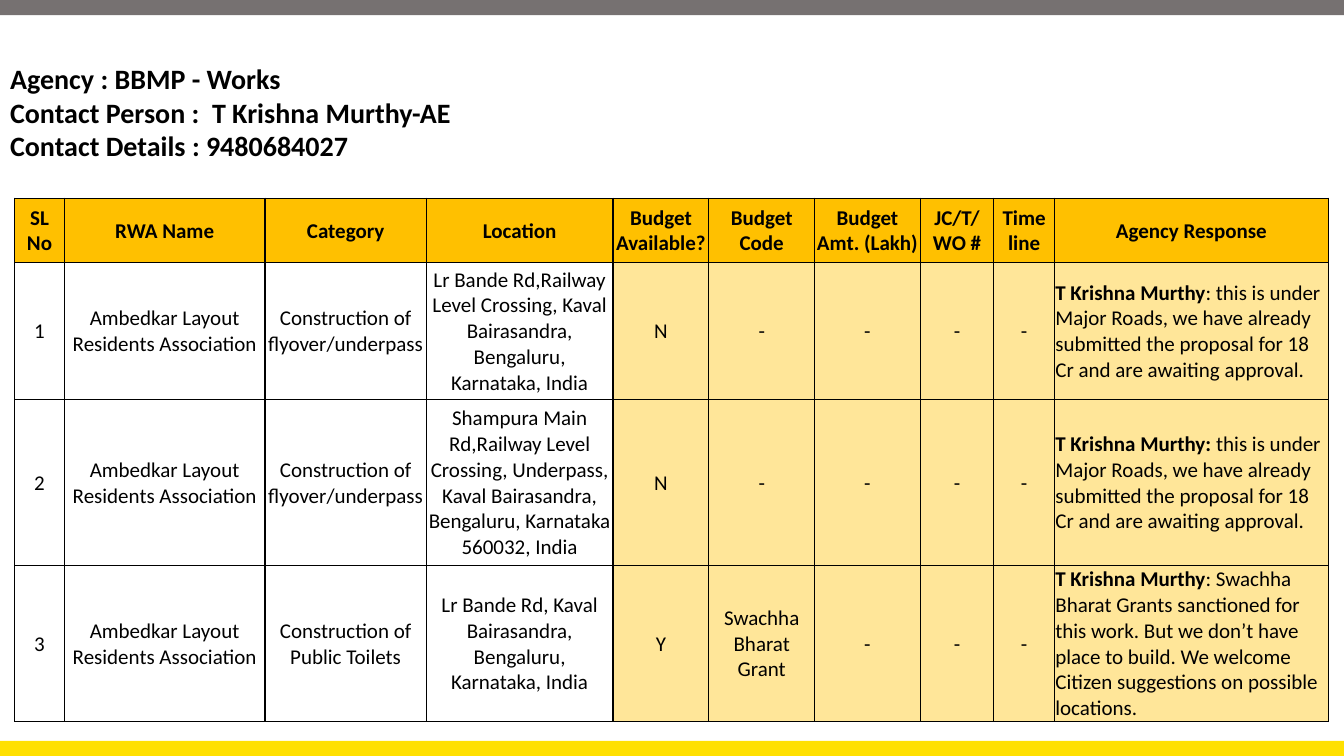
from lxml import etree
from pptx import Presentation
from pptx.dml.color import RGBColor
from pptx.enum.shapes import MSO_SHAPE
from pptx.enum.text import MSO_ANCHOR, MSO_AUTO_SIZE, PP_ALIGN
from pptx.oxml.ns import qn
from pptx.util import Pt

RECT = MSO_SHAPE.RECTANGLE
MIDDLE, BOTTOM = MSO_ANCHOR.MIDDLE, MSO_ANCHOR.BOTTOM
LEFT, CENTER = PP_ALIGN.LEFT, PP_ALIGN.CENTER
NO_AUTOSIZE = MSO_AUTO_SIZE.NONE
TITLE_ONLY = 5

WIDTH, HEIGHT, BAR = 960, 540, 10.8
BLACK, GREY, YELLOW = "000000", "767171", "FFE000"
AMBER, CREAM = "FFC000", "FFE699"
TITLE_FONT = {"name": "Calibri", "size": Pt(20), "bold": True}
CELL_FONT = {"name": "Calibri", "size": Pt(15), "bold": False}
CELL_MARGINS = {"margin_left": Pt(0.75), "margin_right": Pt(0.75),
                "margin_top": Pt(0.75), "margin_bottom": Pt(0)}

TITLE = ["Agency : BBMP - Works",
         "Contact Person :  T Krishna Murthy-AE",
         "Contact Details : 9480684027"]
COLUMNS = [("SL No", 35.5), ("RWA Name", 143.3), ("Category", 115.2),
           ("Location", 133.4), ("Budget Available?", 68.5),
           ("Budget Code", 75.5), ("Budget Amt. (Lakh)", 75.5),
           ("JC/T/WO #", 52.6), ("Time line", 43.2),
           ("Agency Response", 195.8)]
ROW_HEIGHTS = [46, 97.7, 118.9, 108.3]
FIRST_AGENCY_COLUMN = 4
RWA = "Ambedkar Layout Residents Association"
UNDERPASS = "Construction of flyover/underpass"
OFFICER = "T Krishna Murthy"
AWAITING = ("this is under Major Roads, we have already submitted the "
            "proposal for 18 Cr and are awaiting approval.")
REQUESTS = [
    ["1", RWA, UNDERPASS,
     "Lr Bande Rd,Railway Level Crossing, Kaval Bairasandra, Bengaluru, "
     "Karnataka, India",
     "N", "-", "-", "-", "-", (OFFICER, ": " + AWAITING)],
    ["2", RWA, UNDERPASS,
     "Shampura Main Rd,Railway Level Crossing, Underpass, Kaval Bairasandra, "
     "Bengaluru, Karnataka 560032, India",
     "N", "-", "-", "-", "-", (OFFICER + ": ", AWAITING)],
    ["3", RWA, "Construction of Public Toilets",
     "Lr Bande Rd, Kaval Bairasandra, Bengaluru, Karnataka, India",
     "Y", "Swachha Bharat Grant", "-", "-", "-",
     (OFFICER, ": Swachha Bharat Grants sanctioned for this work. But we "
      "don’t have place to build. We welcome Citizen suggestions on possible "
      "locations.")],
]


def rgb(color):
    return RGBColor.from_string(color)


def set_attrs(obj, values):
    for name, value in values.items():
        setattr(obj, name, value)


def add_run(p, text, font, **extra):
    r = p.add_run()
    r.text = text
    set_attrs(r.font, {**font, **extra})
    r.font.color.rgb = rgb(BLACK)


def add_bar(slide, top, color):
    sp = slide.shapes.add_shape(RECT, 0, Pt(top), Pt(WIDTH), Pt(BAR))
    sp.shadow.inherit = False
    sp.fill.solid()
    sp.fill.fore_color.rgb = rgb(color)
    sp.line.fill.background()


def fill_title(slide):
    sp = slide.shapes.title
    set_attrs(sp, {"left": Pt(0), "top": Pt(13), "width": Pt(WIDTH),
                   "height": Pt(106.5)})
    tf = sp.text_frame
    set_attrs(tf, {"word_wrap": True, "auto_size": NO_AUTOSIZE,
                   "vertical_anchor": BOTTOM,
                   "margin_left": Pt(7.2), "margin_right": Pt(7.2),
                   "margin_top": Pt(3.6), "margin_bottom": Pt(3.6)})
    for i, line in enumerate(TITLE):
        p = tf.add_paragraph() if i else tf.paragraphs[0]
        set_attrs(p, {"alignment": LEFT, "line_spacing": 1.0,
                      "space_before": Pt(0)})
        add_run(p, line, TITLE_FONT)


def add_borders(cell):
    tc_pr = cell._tc.get_or_add_tcPr()
    for i, side in enumerate(("a:lnL", "a:lnR", "a:lnT", "a:lnB")):
        ln = etree.Element(qn(side), w=str(Pt(1)))
        fill = etree.SubElement(ln, qn("a:solidFill"))
        etree.SubElement(fill, qn("a:srgbClr"), val=BLACK)
        tc_pr.insert(i, ln)


def fill_cell(cell, content, color, bold):
    """Write a string centred, or a (bold lead, text) pair aligned left."""
    set_attrs(cell, {**CELL_MARGINS, "vertical_anchor": MIDDLE})
    if color:
        cell.fill.solid()
        cell.fill.fore_color.rgb = rgb(color)
    else:
        cell.fill.background()
    add_borders(cell)
    p = cell.text_frame.paragraphs[0]
    if isinstance(content, tuple):
        p.alignment = LEFT
        lead, text = content
        add_run(p, lead, CELL_FONT, bold=True)
        add_run(p, text, CELL_FONT)
    else:
        p.alignment = CENTER
        add_run(p, content, CELL_FONT, bold=bold)


def add_request_table(slide):
    headings, widths = zip(*COLUMNS)
    rows = [headings, *REQUESTS]
    table = slide.shapes.add_table(
        len(rows), len(headings), Pt(10.5), Pt(141.6),
        Pt(sum(widths)), Pt(sum(ROW_HEIGHTS))).table
    table.horz_banding = False
    for column, width in zip(table.columns, widths):
        column.width = Pt(width)
    for i, (row, height) in enumerate(zip(rows, ROW_HEIGHTS)):
        table.rows[i].height = Pt(height)
        for j, content in enumerate(row):
            body = CREAM if j >= FIRST_AGENCY_COLUMN else None
            fill_cell(table.cell(i, j), content, body if i else AMBER, i == 0)


def main():
    prs = Presentation()
    prs.slide_width, prs.slide_height = Pt(WIDTH), Pt(HEIGHT)
    slide = prs.slides.add_slide(prs.slide_layouts[TITLE_ONLY])
    add_bar(slide, HEIGHT - BAR, YELLOW)
    add_bar(slide, 0, GREY)
    fill_title(slide)
    add_request_table(slide)
    prs.save("out.pptx")


if __name__ == "__main__":
    main()
